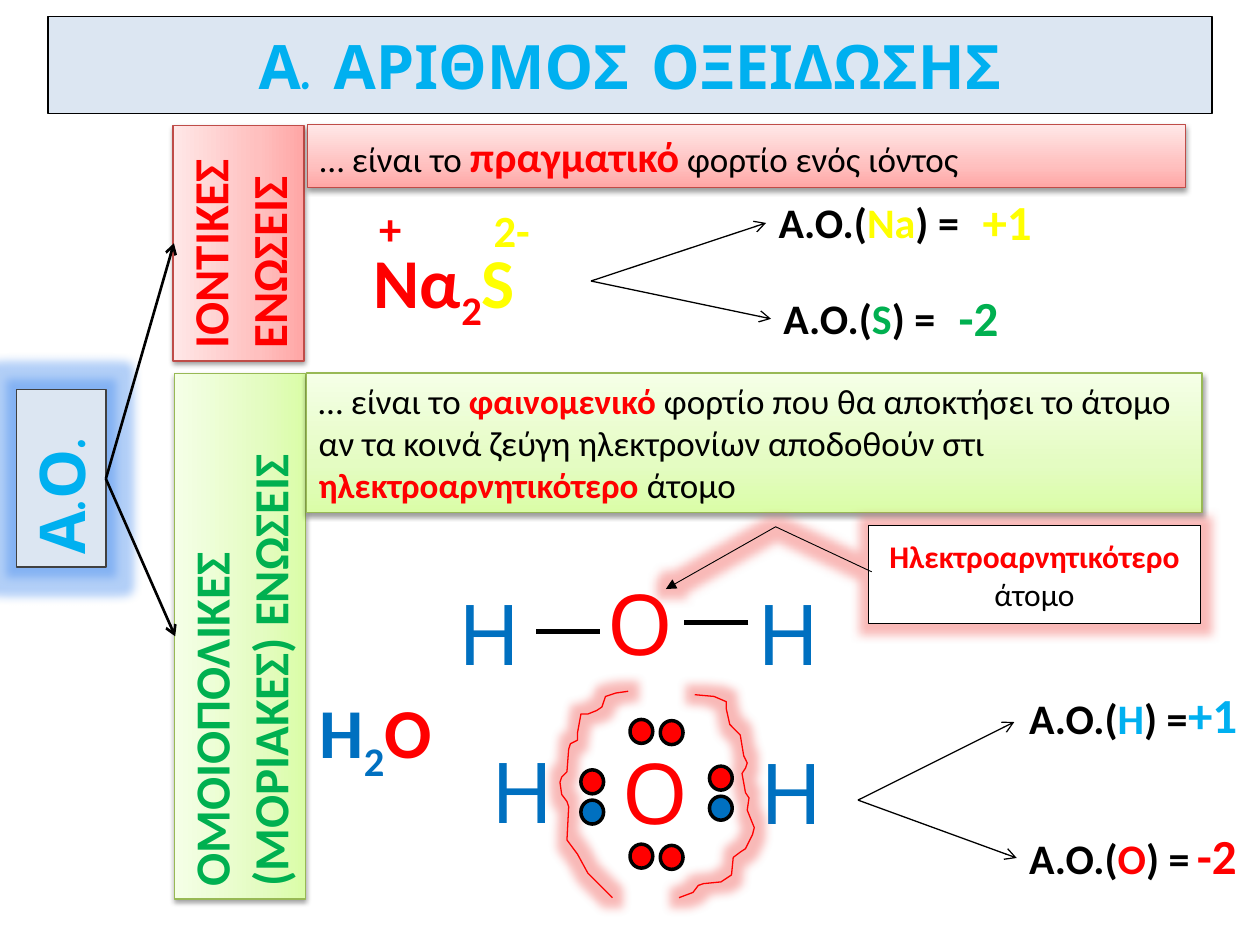
"""Build the slide on oxidation numbers in ionic and covalent compounds."""
from lxml.etree import SubElement
from pptx import Presentation
from pptx.dml.color import RGBColor
from pptx.enum.shapes import MSO_CONNECTOR as Link, MSO_SHAPE as Preset
from pptx.enum.text import MSO_ANCHOR as Anchor, MSO_AUTO_SIZE as AutoSize, PP_ALIGN as Align
from pptx.oxml import parse_xml
from pptx.oxml.ns import nsdecls, qn
from pptx.util import Pt

THEME = {
    "black": "000000", "white": "FFFFFF", "red": "FF0000", "green": "00B050",
    "blue": "0070C0", "sky": "00B0F0", "yellow": "FFFF00", "pale": "DCE6F2", "grey": "404040",
    "body": "Calibri", "display": "Comic Neue",
    "title": 35, "root": 36, "atom": 48, "formula": 40, "charge": 44,
    "heading": 28, "equation": 24, "definition": 20, "callout": 18,
    "pink panel": (("FFA6A5", "FFC0BF", "FFE7E7"), "BF4C48"),
    "green panel": (("DAFDA7", "E4FCC2", "F5FFE7"), "98B955"),
    "blue glow": "4088EE", "red glow": "F0504C",
}

TITLE = ((27.4, 9.4, 665.3, 55.4), "Α. ΑΡΙΘΜΟΣ ΟΞΕΙΔΩΣΗΣ")
ROOT = ((-15.8, 247.7, 101.5, 51.1), "Α.Ο.")
BRANCHES = [
    ((69.1, 101.5, 134.6, 74.9), "pink panel", "red", ["ΙΟΝΤΙΚΕΣ", "ΕΝΩΣΕΙΣ"]),
    ((-13, 326.2, 300.2, 74.9), "green panel", "green", ["ΟΜΟΙΟΠΟΛΙΚΕΣ (ΜΟΡΙΑΚΕΣ) ΕΝΩΣΕΙΣ"]),
]
DEFINITIONS = [
    ((175.7, 71.3, 501.8, 36), "pink panel", [
        ("… είναι το ", "black", "definition"), ("πραγματικό", "red", "equation", True),
        (" φορτίο ενός ιόντος", "black", "definition")]),
    ((175, 213.1, 511.9, 79.9), "green panel", [
        ("… είναι το ", "black", "definition"), ("φαινομενικό", "red", "definition", True),
        (" φορτίο που θα αποκτήσει το άτομο αν τα κοινά ζεύγη ηλεκτρονίων αποδοθούν στι ",
         "black", "definition"),
        ("ηλεκτροαρνητικότερο ", "red", "definition", True), ("άτομο", "black", "definition")]),
]
FORMULAS = [
    ((206.6, 132.5, 130.3, 55.4), [("Να", "red"), ("2", "red", -25), ("S", "yellow")]),
    ((175.7, 390.2, 80.6, 55.4), [("H", "blue"), ("2", "blue", -25), ("O", "red")]),
]
CHARGES = [((209.5, 105.8, 29.5, 60.5), "+", "red"), ((275, 107.3, 38.9, 60.5), "2-", "yellow")]
EQUATIONS = [
    ((437.8, 108.7), "Na", "yellow", (554.4, 105.8, 43.2), "+1", "yellow"),
    ((440.6, 163.4), "S", "green", (540.7, 160.6, 37.4), "-2", "green"),
    ((581, 392.4), "Η", "sky", (671.8, 387.4, 43.2), "+1", "sky"),
    ((581, 472.3), "Ο", "red", (676.8, 468, 37.4), "-2", "red"),
]
ATOMS = [
    (254.9, 329, "Η", "blue"), (339.8, 323.3, "Ο", "red"), (425.5, 329, "Η", "blue"),
    (273.6, 419, "Η", "blue"), (348.5, 419.8, "Ο", "red"), (427.7, 419.8, "Η", "blue"),
]
BONDS = [((427.7, 355.7), (391, 355.7)), ((342.7, 360.7), (306, 360.7))]
ELECTRONS = [
    (331.9, 439.9, "red"), (405.4, 437.8, "red"), (405.4, 455, "blue"), (331.9, 457.2, "blue"),
    (360, 411.1, "red"), (377.3, 411.8, "red"), (360, 482.4, "red"), (377.3, 483.1, "red"),
]
FORKS = [
    ((60.5, 273.6), [(99.4, 139), (100.1, 363.6)], 1.5),
    ((337.7, 160.6), [(437.8, 127.4), (440.6, 182.2)], 0.75),
    ((490.3, 457.2), [(579.6, 412.6), (581, 490.3)], 0.75),
]
CALLOUT = ((496.1, 300.2, 190.1, 56.2), (0.473, 0.011, 0.015, -0.278, 0.648, -0.608), [
    ("Ηλεκτροαρνητικότερο", "red", "callout", True), (" άτομο", "black", "callout")])
DIVIDERS = [
    [(397.4, 397.4), (408, 397.6), (414.7, 401), (415.4, 404.6), (416.9, 414), (420.5, 416.9),
     (422.6, 420.5), (424.8, 432), (427, 435.6), (426.2, 439.2), (424.1, 442.1), (426.2, 452.9),
     (428.4, 455.8), (427, 463), (430.6, 473), (429.8, 477.4), (426.2, 484.6), (422.6, 486.7),
     (419, 490.3), (418.3, 499.7), (412, 503.5), (401.8, 505.4), (398.9, 506.2), (396, 509.8),
     (388.1, 513.4)],
    [(359.3, 394.6), (352.1, 396), (345.6, 398.2), (344.2, 403.9), (340.6, 406.1), (335.5, 407.5),
     (331.9, 408.2), (330.5, 419), (329.8, 423.4), (326.2, 424.8), (324.7, 427.7), (324, 440.6),
     (321.1, 444.2), (320.4, 447.1), (321.1, 454.3), (324, 457.9), (324.7, 460.8), (324, 480.2),
     (330.5, 488.2), (335.5, 499), (339.8, 503.3), (345.6, 509), (349.9, 513.4)],
]


def rgb(colour):
    return RGBColor.from_string(THEME[colour])


def write(part, paragraphs, face="body", align=Align.LEFT, anchor=Anchor.TOP, wrap=True):
    frame = part.text_frame
    frame.word_wrap = wrap
    frame.vertical_anchor = anchor
    frame.auto_size = AutoSize.NONE if wrap else AutoSize.SHAPE_TO_FIT_TEXT
    for index, runs in enumerate(paragraphs):
        paragraph = frame.add_paragraph() if index else frame.paragraphs[0]
        paragraph.alignment = align
        paragraph.font.name = THEME[face]
        for words, colour, size, bold, baseline in (tuple(r) + (False, 0)[len(r) - 3:] for r in runs):
            run = paragraph.add_run()
            run.text = words
            run.font.size = Pt(THEME[size])
            run.font.bold = bold
            run.font.color.rgb = rgb(colour)
            if baseline:
                run.font._element.set("baseline", str(baseline * 1000))


def label(slide, box, runs, **layout):
    write(slide.shapes.add_textbox(*map(Pt, box)), [runs], **layout)


def block(slide, preset, box, fill, line, width):
    part = slide.shapes.add_shape(preset, *map(Pt, box))
    part.shadow.inherit = False
    part.fill.solid()
    part.fill.fore_color.rgb = rgb(fill)
    part.line.color.rgb = rgb(line)
    part.line.width = Pt(width)
    return part


def effect(part, kind, colour, alpha, **settings):
    effects = part._element.spPr.find(qn("a:effectLst"))
    node = SubElement(effects, qn(f"a:{kind}"), {k: str(v) for k, v in settings.items()})
    tint = SubElement(node, qn("a:srgbClr"), val=colour)
    SubElement(tint, qn("a:alpha"), val=str(alpha * 1000))


def glow(part, colour):
    effect(part, "glow", THEME[colour], 40, rad=Pt(11))


def panel(slide, box, style):
    colours, edge = THEME[style]
    part = block(slide, Preset.RECTANGLE, box, "white", "black", 0.75)
    part.line.color.rgb = RGBColor.from_string(edge)
    stops = "".join(f'<a:gs pos="{at}000"><a:srgbClr val="{colour}"/></a:gs>'
                    for at, colour in zip((0, 35, 100), colours))
    properties = part._element.spPr
    properties.replace(properties.find(qn("a:solidFill")), parse_xml(
        f'<a:gradFill rotWithShape="1" {nsdecls("a")}><a:gsLst>{stops}</a:gsLst>'
        '<a:lin ang="16200000" scaled="1"/></a:gradFill>'))
    effect(part, "outerShdw", THEME["black"], 38, blurRad=Pt(3.1), dist=Pt(1.6),
           dir=5400000, rotWithShape=0)
    return part


def arrowhead(part, kind):
    SubElement(part.line._get_or_add_ln(), qn("a:tailEnd"), type=kind)


def connect(slide, start, end, width):
    link = slide.shapes.add_connector(Link.STRAIGHT, *map(Pt, start + end))
    link.line.color.rgb = rgb("black")
    link.line.width = Pt(width)
    SubElement(link._element.spPr, qn("a:effectLst"))
    return link


def main():
    deck = Presentation()
    deck.slide_width, deck.slide_height = Pt(720), Pt(540)
    slide = deck.slides.add_slide(deck.slide_layouts[6])

    box, words = TITLE
    write(block(slide, Preset.RECTANGLE, box, "pale", "black", 0.75),
          [[(words, "sky", "title", True)]], "display", Align.CENTER, Anchor.MIDDLE)
    for box, style, colour, lines in BRANCHES:
        branch = panel(slide, box, style)
        branch.rotation = 270
        write(branch, [[(words, colour, "heading", True)] for words in lines])
    for box, style, runs in DEFINITIONS:
        write(panel(slide, box, style), [runs])
    box, words = ROOT
    root = block(slide, Preset.RECTANGLE, box, "pale", "grey", 0.75)
    root.rotation = 270
    glow(root, "blue glow")
    write(root, [[(words, "sky", "root", True)]], "display", wrap=False)

    for start, ends, width in FORKS:
        for end in ends:
            arrowhead(connect(slide, start, end, width), "arrow")
    for box, runs in FORMULAS:
        label(slide, box, [(words, colour, "formula", True, *shift) for words, colour, *shift in runs])
    for box, words, colour in CHARGES:
        label(slide, box, [(words, colour, "charge", True, 30)], wrap=False)
    for x, y, symbol, colour in ATOMS:
        label(slide, (x, y, 70.6, 65.5), [(symbol, colour, "atom")], face="display")
    for start, end in BONDS:
        connect(slide, start, end, 3)

    box, bends, runs = CALLOUT
    callout = block(slide, Preset.LINE_CALLOUT_2, box, "white", "black", 0.5)
    for index, bend in enumerate(bends):
        callout.adjustments[index] = bend
    arrowhead(callout, "triangle")
    glow(callout, "red glow")
    write(callout, [runs], align=Align.CENTER, anchor=Anchor.MIDDLE)

    for start, *rest in DIVIDERS:
        builder = slide.shapes.build_freeform(*start, scale=Pt(1))
        builder.add_line_segments(rest, close=False)
        divider = builder.convert_to_shape()
        divider.shadow.inherit = False
        divider.fill.background()
        divider.line.color.rgb = rgb("red")
        divider.line.width = Pt(0.75)
        glow(divider, "red glow")
    for corner, symbol, colour, spot, value, tint in EQUATIONS:
        label(slide, corner + (153.4, 36), [
            ("A.O.(", "black", "equation", True), (symbol, colour, "equation", True),
            (") =", "black", "equation", True)])
        label(slide, spot + (41,), [(value, tint, "heading", True)], wrap=False)
    for x, y, colour in ELECTRONS:
        block(slide, Preset.OVAL, (x, y, 13, 13.7), colour, "black", 2)

    deck.save("out.pptx")


if __name__ == "__main__":
    main()
